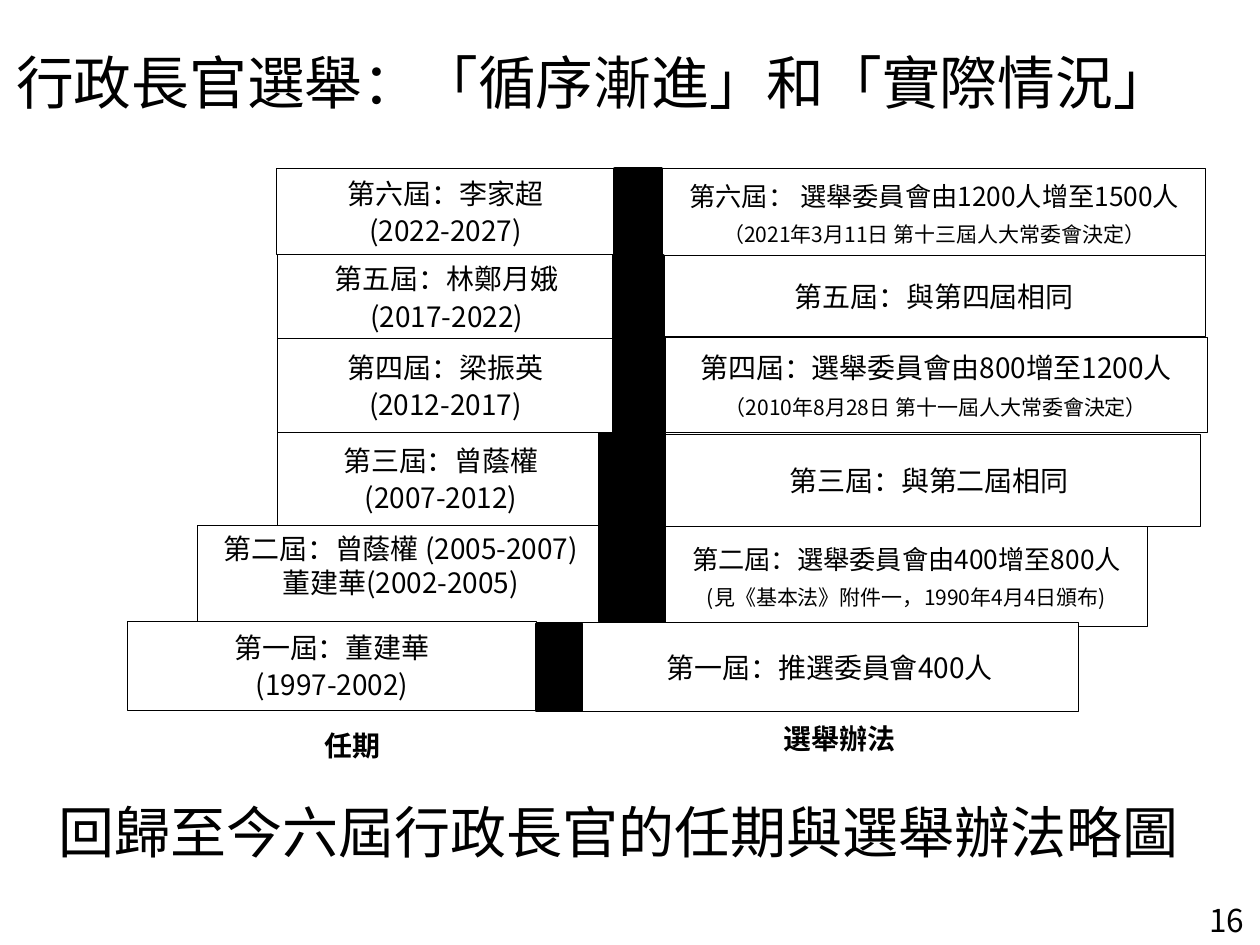
"""Builds a slide on the six terms of the Chief Executive and their election methods."""
import pptx
import pptx.util
import pptx.dml.color
import pptx.enum.shapes
import pptx.enum.text

Inches, Pt = pptx.util.Inches, pptx.util.Pt
ALIGN, ANCHOR = pptx.enum.text.PP_ALIGN, pptx.enum.text.MSO_ANCHOR
COLORS = {"ink": "000000", "paper": "FFFFFF"}
FONT = "Noto Sans CJK SC"

TERMS = [
    ((1.18, 0, 2.69, 0.68), ["第六屆：李家超", "(2022-2027)"]),
    ((1.19, 0.68, 2.69, 0.68), ["第五屆：林鄭月娥", "(2017-2022)"]),
    ((1.19, 1.35, 2.67, 0.74), ["第四屆：梁振英", "(2012-2017)"]),
    ((1.19, 2.09, 2.6, 0.74), ["第三屆：曾蔭權", "(2007-2012)"]),
    ((0.56, 2.83, 3.22, 0.77), ["第二屆：曾蔭權 (2005-2007)\v董建華(2002-2005)"]),
    ((0, 3.59, 3.25, 0.71), ["第一屆：董建華", "(1997-2002)"]),
]
METHODS = [
    ((0.65, 0, 4.31, 0.71), 15, 1.8, 0,
     ["第六屆： 選舉委員會由1200人增至1500人", "（2021年3月11日 第十三屆人大常委會決定）"]),
    ((0.65, 0.69, 4.31, 0.64), 16, 1.8, 0, ["第五屆：與第四屆相同"]),
    ((0.67, 1.34, 4.3, 0.75), 16, 6, 6,
     ["第四屆：選舉委員會由800增至1200人", "（2010年8月28日 第十一屆人大常委會決定）"]),
    ((0.61, 2.11, 4.31, 0.73), 16, 1.8, 0, ["第三屆：與第二屆相同"]),
    ((0.67, 2.84, 3.83, 0.79), 15, 0, 0,
     ["第二屆：選舉委員會由400增至800人", "(見《基本法》附件一，1990年4月4日頒布)"]),
    ((0, 3.6, 3.95, 0.71), 16, 2.1, 0, ["第一屆：推選委員會400人"]),
]
SPINE = [(0.62, 0, 0.37, 1.48), (0.61, 0.69, 0.39, 1.45), (0.63, 2.09, 0.37, 0.36),
         (0.5, 2.1, 0.51, 1.49), (0, 3.61, 0.35, 0.69)]


def rgb(name):
    """Return the named colour."""
    return pptx.dml.color.RGBColor.from_string(COLORS[name])


def apply(obj, values):
    """Set attributes of an object from a dict."""
    for name, value in values.items():
        setattr(obj, name, value)


def within(box, at):
    """Turn a place relative to a box into slide lengths."""
    x, y, w, h = at
    return [Inches(v) for v in (box[0] + x, box[1] + y, w, h)]


def add_block(s, place, fill="paper", line=0.5):
    """Add a rectangle with a fill and an optional black outline."""
    sp = s.shapes.add_shape(pptx.enum.shapes.MSO_SHAPE.RECTANGLE, *place)
    sp.shadow.inherit = False
    sp.fill.solid()
    sp.fill.fore_color.rgb = rgb(fill)
    if line:
        sp.line.color.rgb = rgb("ink")
        sp.line.width = Pt(line)
    else:
        sp.line.fill.background()
    return sp


def write(sp, texts, sizes, anchor=ANCHOR.MIDDLE, bold=False, **para):
    """Write one paragraph per text, each at its own size."""
    tf = sp.text_frame
    apply(tf, {"word_wrap": True, "vertical_anchor": anchor})
    for i, (text, size) in enumerate(zip(texts, sizes)):
        p = tf.add_paragraph() if i else tf.paragraphs[0]
        p.text = text
        apply(p, {"alignment": ALIGN.CENTER, **para})
        for r in p.runs:
            apply(r.font, {"name": FONT, "size": Pt(size), "bold": bold})
            r.font.color.rgb = rgb("ink")
            r.font._element.get_or_add_ea().set("typeface", FONT) if hasattr(
                r.font._element, "get_or_add_ea") else None
    return tf


def add_label(s, box, text, size, anchor=ANCHOR.TOP, align=ALIGN.LEFT):
    """Add a single line of free text in a box."""
    sp = s.shapes.add_textbox(*(Inches(v) for v in box))
    write(sp, [text], [size], anchor, alignment=align)


def add_terms(s, box):
    """Add the left steps with holders and years."""
    for at, texts in TERMS:
        single = len(texts) == 1
        write(add_block(s, within(box, at)), texts, [16, 16],
              ANCHOR.TOP if single else ANCHOR.MIDDLE,
              space_before=Pt(0 if single else 2.1))


def add_methods(s, box):
    """Add the right steps with election methods and their sources."""
    for at, size, before, after, texts in METHODS:
        tf = write(add_block(s, within(box, at)), texts, [size, 12], space_before=Pt(6))
        tf.paragraphs[0].space_before = Pt(before)
        tf.paragraphs[-1].space_after = Pt(after)


def add_spine(s, box):
    """Add the black column between the two sides."""
    for at in SPINE:
        add_block(s, within(box, at), "ink", 2)


def add_captions(s, box):
    """Add the bold captions under the two sides."""
    sp = add_block(s, within(box, (3.12, 0, 3.47, 0.37)), line=0)
    write(sp, ["選舉辦法"], [16], ANCHOR.TOP, True)
    sp = add_block(s, within(box, (0, 0.05, 2.45, 0.37)), line=0)
    tf = write(sp, ["任期"], [16], ANCHOR.TOP, True, alignment=ALIGN.LEFT)
    tf.paragraphs[0]._p.get_or_add_pPr().set("indent", str(Inches(0.67)))


def main():
    """Build and save the slide."""
    prs = pptx.Presentation()
    apply(prs, {"slide_width": Inches(10), "slide_height": Inches(7.5)})
    s = prs.slides.add_slide(prs.slide_layouts[6])
    add_label(s, (0.26, 5.97, 9.31, 1.25), "回歸至今六屆行政長官的任期與選舉辦法略圖", 32,
              ANCHOR.MIDDLE, ALIGN.CENTER)
    add_terms(s, (1.01, 1.34, 3.88, 4.3))
    add_methods(s, (4.61, 1.34, 4.97, 4.31))
    add_spine(s, (4.26, 1.34, 1.01, 4.3))
    add_captions(s, (1.81, 5.68, 6.59, 0.42))
    add_label(s, (0.03, 0.32, 9.94, 0.66), "行政長官選舉：「循序漸進」和「實際情況」", 33)
    add_label(s, (9.5, 7.1, 0.5, 0.4), "16", 18)
    prs.save("out.pptx")


if __name__ == "__main__":
    main()
